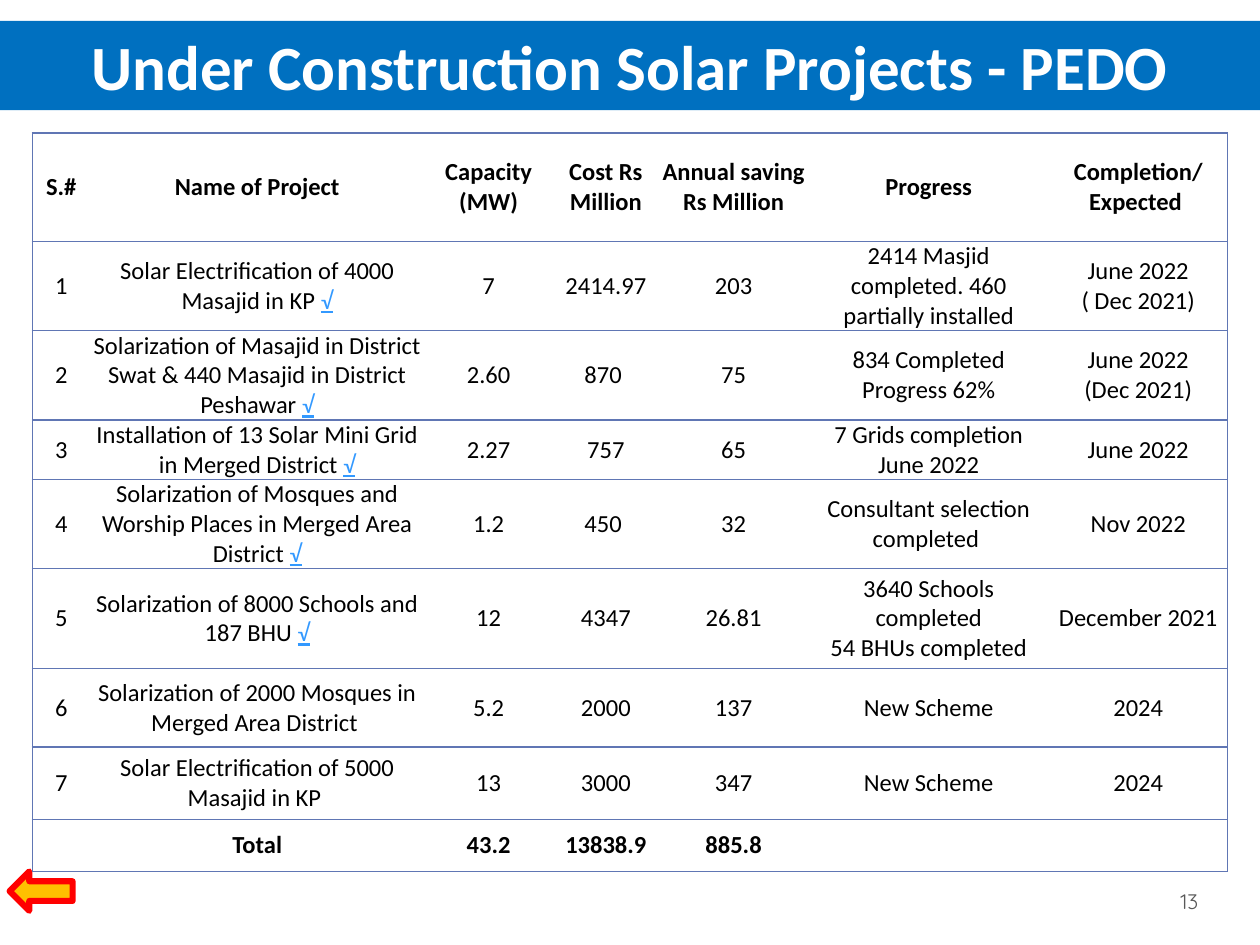
"""Build the slide on solar projects under construction."""
from lxml import etree
from pptx import Presentation
from pptx import util as u
from pptx.dml import color
from pptx.enum import shapes, text
from pptx.oxml import ns

COLORS = {"banner": "0070C0", "white": "FFFFFF", "black": "000000", "rule": "6076B4",
          "check": "3399FF", "number": "595959", "arrow": "FFC000", "outline": "FF0000"}
CHECK = "√"
COLUMN_WIDTHS = [33, 191, 73.5, 60.5, 85.5, 137.5, 102]
ROW_HEIGHTS = [62, 51, 51, 34, 51, 57, 45, 41.5, 29.5]
PROJECTS = [
    ["S.#", "Name of Project", "Capacity (MW)", "Cost Rs Million",
     "Annual saving Rs Million", "Progress", "Completion/ Expected "],
    ["1", "Solar Electrification of 4000 Masajid in KP √", "7", "2414.97", "203",
     "2414 Masjid completed. 460 partially installed", "June 2022\n( Dec 2021)"],
    ["2", "Solarization of Masajid in District Swat & 440 Masajid in District Peshawar √",
     "2.60", "870 ", "75", "834 Completed\nProgress 62%", "June 2022\n(Dec 2021)"],
    ["3", "Installation of 13 Solar Mini Grid in Merged District √", "2.27", "757", "65",
     "7 Grids completion June 2022", "June 2022"],
    ["4", "Solarization of Mosques and Worship Places in Merged Area District √",
     "1.2", "450 ", "32", "Consultant selection completed ", "Nov 2022"],
    ["5", "Solarization of 8000 Schools and 187 BHU √", "12", "4347", "26.81",
     "3640 Schools completed\n54 BHUs completed", "December 2021"],
    ["6", "Solarization of 2000 Mosques in Merged Area District ", "5.2", "2000", "137",
     "New Scheme", "2024"],
    ["7", "Solar Electrification of 5000 Masajid in KP ", "13", "3000", "347",
     "New Scheme", "2024"],
    ["", "Total", "43.2", "13838.9", "885.8", "", ""],
]


class SlideBuilder:
    font = "Calibri"
    body_size = 14

    def __init__(self, deck):
        self.page = deck.slides.add_slide(deck.slide_layouts[5])

    def rgb(self, name):
        return color.RGBColor.from_string(COLORS[name])

    def place(self, box, left, top, width, height):
        box.left, box.top = u.Pt(left), u.Pt(top)
        box.width, box.height = u.Pt(width), u.Pt(height)

    def fill(self, item, name):
        item.fill.solid()
        item.fill.fore_color.rgb = self.rgb(name)

    def run(self, para, words, size, tone, bold=False, underline=False, font=None):
        span = para.add_run()
        span.text = words
        span.font.name = font or self.font
        span.font.size = u.Pt(size)
        span.font.bold = bold
        span.font.underline = underline
        span.font.color.rgb = self.rgb(tone)

    def title(self, words, *frame):
        box = self.page.shapes.title
        self.place(box, *frame)
        self.fill(box, "banner")
        box.text_frame.auto_size = text.MSO_AUTO_SIZE.NONE
        box.text_frame.vertical_anchor = text.MSO_ANCHOR.MIDDLE
        para = box.text_frame.paragraphs[0]
        para.alignment = text.PP_ALIGN.CENTER
        self.run(para, words, 36, "white", bold=True)

    def page_number(self, words, *frame):
        box = self.page.shapes.add_textbox(*map(u.Pt, frame))
        box.text_frame.word_wrap = True
        box.text_frame.vertical_anchor = text.MSO_ANCHOR.MIDDLE
        box.text_frame.margin_left = u.Pt(2)
        self.run(box.text_frame.paragraphs[0], words, 12, "number", font="Quicksand")

    def back_arrow(self, *frame):
        arrow = self.page.shapes.add_shape(shapes.MSO_SHAPE.LEFT_ARROW, *map(u.Pt, frame))
        arrow.shadow.inherit = False
        self.fill(arrow, "arrow")
        arrow.line.color.rgb = self.rgb("outline")
        arrow.line.width = u.Pt(3.5)

    def borders(self, cell, visible):
        properties = cell._tc.get_or_add_tcPr()
        for index, side in enumerate("LRTB"):
            line = etree.Element(ns.qn(f"a:ln{side}"), w=str(u.Pt(1)))
            if side in visible:
                solid = etree.SubElement(line, ns.qn("a:solidFill"))
                etree.SubElement(solid, ns.qn("a:srgbClr"), val=COLORS["rule"])
            else:
                etree.SubElement(line, ns.qn("a:noFill"))
            properties.insert(index, line)

    def cell(self, cell, words, bold, visible):
        cell.vertical_anchor = text.MSO_ANCHOR.MIDDLE
        cell.margin_left = cell.margin_right = u.Pt(2)
        cell.margin_top = cell.margin_bottom = 0
        self.fill(cell, "white")
        self.borders(cell, visible)
        for index, line in enumerate(words.split("\n") if words else []):
            frame = cell.text_frame
            para = frame.add_paragraph() if index else frame.paragraphs[0]
            para.alignment = text.PP_ALIGN.CENTER
            self.run(para, line.removesuffix(CHECK), self.body_size, "black", bold)
            if line.endswith(CHECK):
                self.run(para, CHECK, self.body_size, "check", underline=True)

    def table(self, rows, widths, heights, left, top):
        frame = self.page.shapes.add_table(len(rows), len(widths), u.Pt(left), u.Pt(top),
                                           u.Pt(sum(widths)), u.Pt(sum(heights)))
        grid = frame.table
        grid.first_row = grid.horz_banding = False
        for column, width in zip(grid.columns, widths):
            column.width = u.Pt(width)
        last_row, last_column = len(rows) - 1, len(widths) - 1
        for r, values in enumerate(rows):
            grid.rows[r].height = u.Pt(heights[r])
            for c, words in enumerate(values):
                visible = "TB" + "L" * (c == 0) + "R" * (c == last_column)
                self.cell(grid.cell(r, c), words, r in (0, last_row), visible)


def main():
    deck = Presentation()
    deck.slide_width, deck.slide_height = u.Pt(720), u.Pt(540)
    builder = SlideBuilder(deck)
    builder.page_number("13", 672.5, 500.5, 44, 29)
    builder.title("Under Construction Solar Projects - PEDO", 0, 12, 720, 51)
    builder.back_arrow(5.5, 498, 36, 22.5)
    builder.table(PROJECTS, COLUMN_WIDTHS, ROW_HEIGHTS, 18.5, 76)
    deck.save("out.pptx")


if __name__ == "__main__":
    main()
